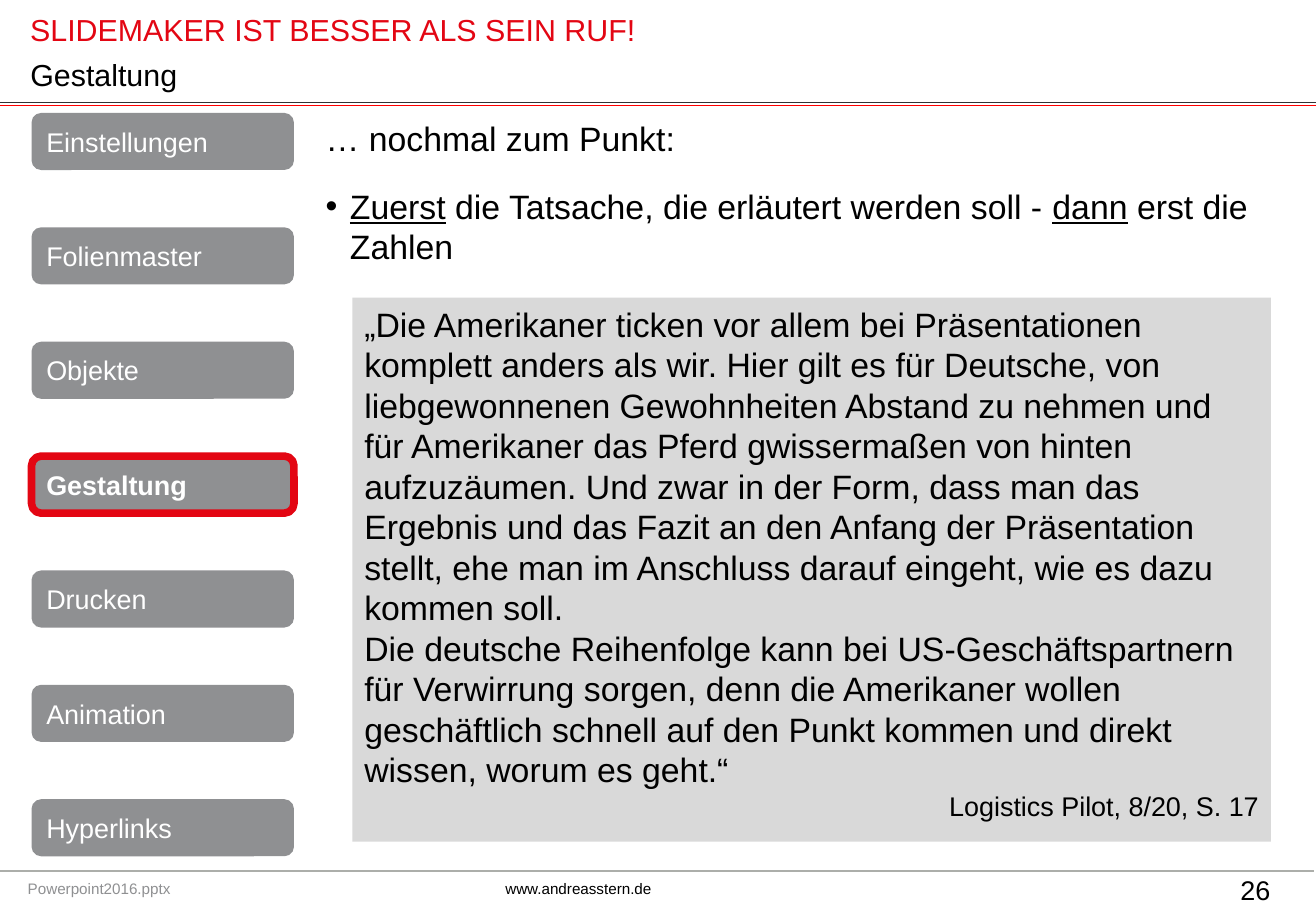
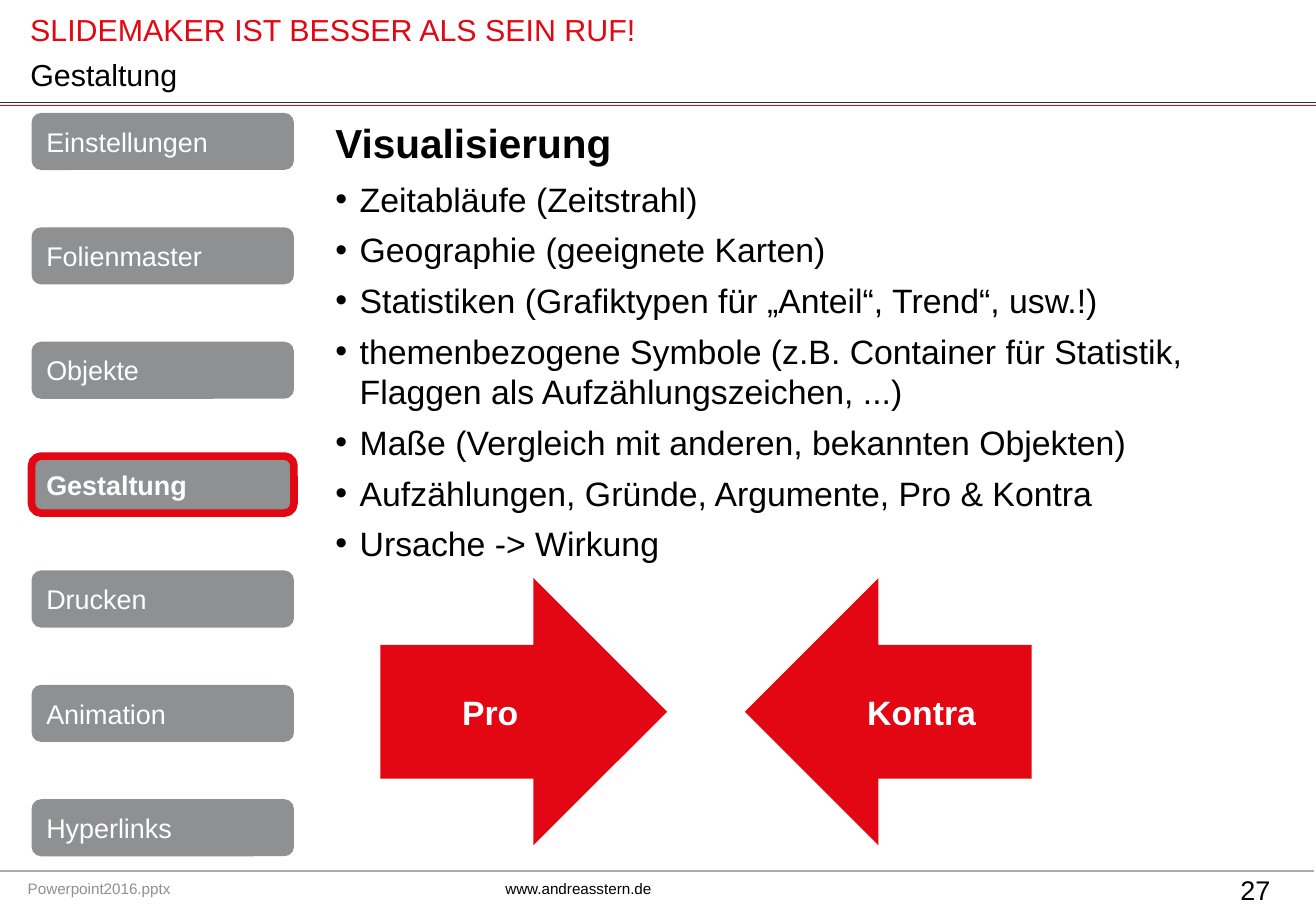
import dataclasses

import pptx
import pptx.dml.color
import pptx.enum.shapes
import pptx.enum.text
import pptx.oxml
import pptx.oxml.ns
import pptx.util

Inches = pptx.util.Inches
Align = pptx.enum.text.PP_ALIGN
Anchor = pptx.enum.text.MSO_ANCHOR
Shape = pptx.enum.shapes.MSO_SHAPE
DRAWING_NS = pptx.oxml.ns.nsdecls("a")


@dataclasses.dataclass(frozen=True)
class Theme:
    font: str = "Arial"
    black: str = "000000"
    white: str = "FFFFFF"
    red: str = "E30613"
    rule_red: str = "FF0000"
    rule_dark: str = "303234"
    rule_grey: str = "ACAEAA"
    grey: str = "8F9092"
    panel: str = "D9D9D9"
    heading: int = 24
    body: int = 20
    title: int = 18
    label: int = 16
    footer: int = 9


THEME = Theme()
WIDTH, HEIGHT = 10.83, 7.5
HEADER_BOX = (0.15, 0.04, 8.73, 0.4)
TITLE_BOX = (0.15, 0.46, 8.73, 0.3)
MENU_BOX = (0.26, 0.93, 2.16, 6.12)
FOOTER_BOX = (0.13, 7.19, 8.62, 0.25)
NUMBER_BOX = (10.11, 7.14, 0.64, 0.37)
CHAPTERS = ["Einstellungen", "Folienmaster", "Objekte", "Gestaltung",
            "Drucken", "Animation", "Hyperlinks"]


def rgb(color):
    return pptx.dml.color.RGBColor.from_string(color)


def add_span(para, text, size, color=THEME.black, bold=False, underline=False):
    span = para.add_run()
    span.text = text
    span.font.name = THEME.font
    span.font.size = pptx.util.Pt(size)
    span.font.color.rgb = rgb(color)
    span.font.bold = bold
    span.font.underline = underline


def add_para(frame, first=False, align=Align.LEFT, after=0):
    para = frame.paragraphs[0] if first else frame.add_paragraph()
    para.alignment = align
    para.space_before = pptx.util.Pt(0)
    para.space_after = pptx.util.Pt(after)
    return para


def add_property(para, xml):
    """Append one drawing element, such as a bullet, to the paragraph."""
    tag, rest = xml.split(" ", 1)
    element = pptx.oxml.parse_xml(f"<{tag} {DRAWING_NS} {rest}")
    para._p.get_or_add_pPr().append(element)


def set_bullet(para, bulleted):
    properties = para._p.get_or_add_pPr()
    indent = Inches(0.2) if bulleted else 0
    properties.set("marL", str(indent))
    properties.set("indent", str(-indent))
    if bulleted:
        add_property(para, f'a:buFont typeface="{THEME.font}"/>')
        add_property(para, 'a:buChar char="•"/>')
    else:
        add_property(para, "a:buNone />")


def place(shape, box):
    shape.left, shape.top, shape.width, shape.height = map(Inches, box)


def add_panel(page, kind, box, fill, anchor=Anchor.MIDDLE):
    panel = page.shapes.add_shape(kind, *map(Inches, box))
    panel.shadow.inherit = False
    panel.fill.solid()
    panel.fill.fore_color.rgb = rgb(fill)
    panel.line.fill.background()
    panel.text_frame.word_wrap = True
    panel.text_frame.vertical_anchor = anchor
    return panel


def add_text_box(page, box, wrap=True):
    frame = page.shapes.add_textbox(*map(Inches, box)).text_frame
    frame.word_wrap = wrap
    return add_para(frame, first=True)


def add_rule(page, top, right, color, weight):
    rule = page.shapes.add_connector(
        pptx.enum.shapes.MSO_CONNECTOR.STRAIGHT,
        Inches(0), Inches(top), Inches(right), Inches(top))
    rule.line.color.rgb = rgb(color)
    rule.line.width = pptx.util.Pt(weight)
    rule._element.spPr.append(pptx.oxml.parse_xml(f"<a:effectLst {DRAWING_NS}/>"))


def add_header(page, chapter):
    add_span(add_text_box(page, HEADER_BOX),
             "SLIDEMAKER IST BESSER ALS SEIN RUF!", THEME.title, THEME.red)
    title = page.shapes.title
    place(title, TITLE_BOX)
    title.fill.solid()
    title.fill.fore_color.rgb = rgb(THEME.white)
    title.text_frame.auto_size = pptx.enum.text.MSO_AUTO_SIZE.NONE
    title.text_frame.vertical_anchor = Anchor.MIDDLE
    add_span(add_para(title.text_frame, first=True), chapter, THEME.title)
    add_rule(page, 0.87, WIDTH, THEME.rule_red, 0.5)
    add_rule(page, 0.84, WIDTH, THEME.rule_dark, 0.5)


def add_menu(page, box, active):
    left, top, width, height = box
    button_height = 0.47
    step = (height - button_height) / (len(CHAPTERS) - 1)
    for index, chapter in enumerate(CHAPTERS):
        button = add_panel(page, Shape.ROUNDED_RECTANGLE,
                           (left, top + index * step, width, button_height), THEME.grey)
        if chapter == active:
            button.line.color.rgb = rgb(THEME.red)
            button.line.width = pptx.util.Pt(4.5)
        add_span(add_para(button.text_frame, first=True), chapter,
                 THEME.label, THEME.white, bold=chapter == active)


def add_footer(page, number):
    add_rule(page, 7.17, 10.81, THEME.rule_grey, 1)
    para = add_text_box(page, FOOTER_BOX)
    add_property(para, f'a:tabLst ><a:tab pos="{Inches(3.93)}" algn="l"/></a:tabLst>')
    add_span(para, "Powerpoint2016.pptx", THEME.footer, THEME.grey)
    add_span(para, "\twww.andreasstern.de", THEME.footer)
    add_span(add_text_box(page, NUMBER_BOX, wrap=False), str(number), THEME.label)


def add_page(deck, chapter, number):
    page = deck.slides.add_slide(deck.slide_layouts[1])
    add_header(page, chapter)
    add_menu(page, MENU_BOX, chapter)
    add_footer(page, number)
    return page


def fill_body(page, box, heading, heading_style, items, gap):
    """Heading, then bullets; an item is a list of (text, underlined) pairs."""
    body = page.placeholders[1]
    place(body, box)
    frame = body.text_frame
    frame.auto_size = pptx.enum.text.MSO_AUTO_SIZE.NONE
    para = add_para(frame, first=True, after=gap * heading_style["size"])
    set_bullet(para, False)
    add_span(para, heading, **heading_style)
    for item in items:
        para = add_para(frame, after=gap * THEME.body)
        set_bullet(para, True)
        for text, underlined in item:
            add_span(para, text, THEME.body, underline=underlined)


def add_quote(page, box, paragraphs, source):
    frame = add_panel(page, Shape.RECTANGLE, box, THEME.panel, Anchor.TOP).text_frame
    for index, text in enumerate(paragraphs):
        add_span(add_para(frame, first=index == 0), text, THEME.body)
    add_span(add_para(frame, align=Align.RIGHT), source, THEME.label)


def add_arrow_pair(page, box):
    left, top, width, height = box
    arrow_width = 2.36
    arrows = [(Shape.RIGHT_ARROW, left, "Pro"),
              (Shape.LEFT_ARROW, left + width - arrow_width, "Kontra")]
    for kind, arrow_left, label in arrows:
        arrow = add_panel(page, kind, (arrow_left, top, arrow_width, height), THEME.red)
        add_span(add_para(arrow.text_frame, first=True, align=Align.CENTER),
                 label, THEME.body, THEME.white, bold=True)


def build_quote_page(deck):
    page = add_page(deck, "Gestaltung", 26)
    fill_body(page, (2.58, 0.92, 8, 1.38), "… nochmal zum Punkt:", {"size": THEME.body},
              [[("Zuerst", True),
                (" die Tatsache, die erläutert werden soll - ", False),
                ("dann", True),
                (" erst die Zahlen", False)]], gap=0.8)
    add_quote(page, (2.9, 2.45, 7.56, 4.48), [
        "„Die Amerikaner ticken vor allem bei Präsentationen komplett anders als wir. "
        "Hier gilt es für Deutsche, von liebgewonnenen Gewohnheiten Abstand zu nehmen "
        "und für Amerikaner das Pferd gwissermaßen von hinten aufzuzäumen. Und zwar in "
        "der Form, dass man das Ergebnis und das Fazit an den Anfang der Präsentation "
        "stellt, ehe man im Anschluss darauf eingeht, wie es dazu kommen soll.",
        "Die deutsche Reihenfolge kann bei US-Geschäftspartnern für Verwirrung sorgen, "
        "denn die Amerikaner wollen geschäftlich schnell auf den Punkt kommen und "
        "direkt wissen, worum es geht.“",
    ], "Logistics Pilot, 8/20, S. 17")


def build_visual_page(deck):
    page = add_page(deck, "Gestaltung", 27)
    topics = [
        "Zeitabläufe (Zeitstrahl)",
        "Geographie (geeignete Karten)",
        "Statistiken (Grafiktypen für „Anteil“, Trend“, usw.!)",
        "themenbezogene Symbole (z.B. Container für Statistik, "
        "Flaggen als Aufzählungszeichen, ...)",
        "Maße (Vergleich mit anderen, bekannten Objekten)",
        "Aufzählungen, Gründe, Argumente, Pro & Kontra",
        "Ursache -> Wirkung",
    ]
    fill_body(page, (2.66, 0.92, 7.84, 3.92), "Visualisierung",
              {"size": THEME.heading, "bold": True},
              [[(topic, False)] for topic in topics], gap=0.3)
    add_arrow_pair(page, (3.13, 4.76, 5.36, 2.2))


def main():
    deck = pptx.Presentation()
    deck.slide_width, deck.slide_height = Inches(WIDTH), Inches(HEIGHT)
    build_quote_page(deck)
    build_visual_page(deck)
    deck.save("out.pptx")


if __name__ == "__main__":
    main()
